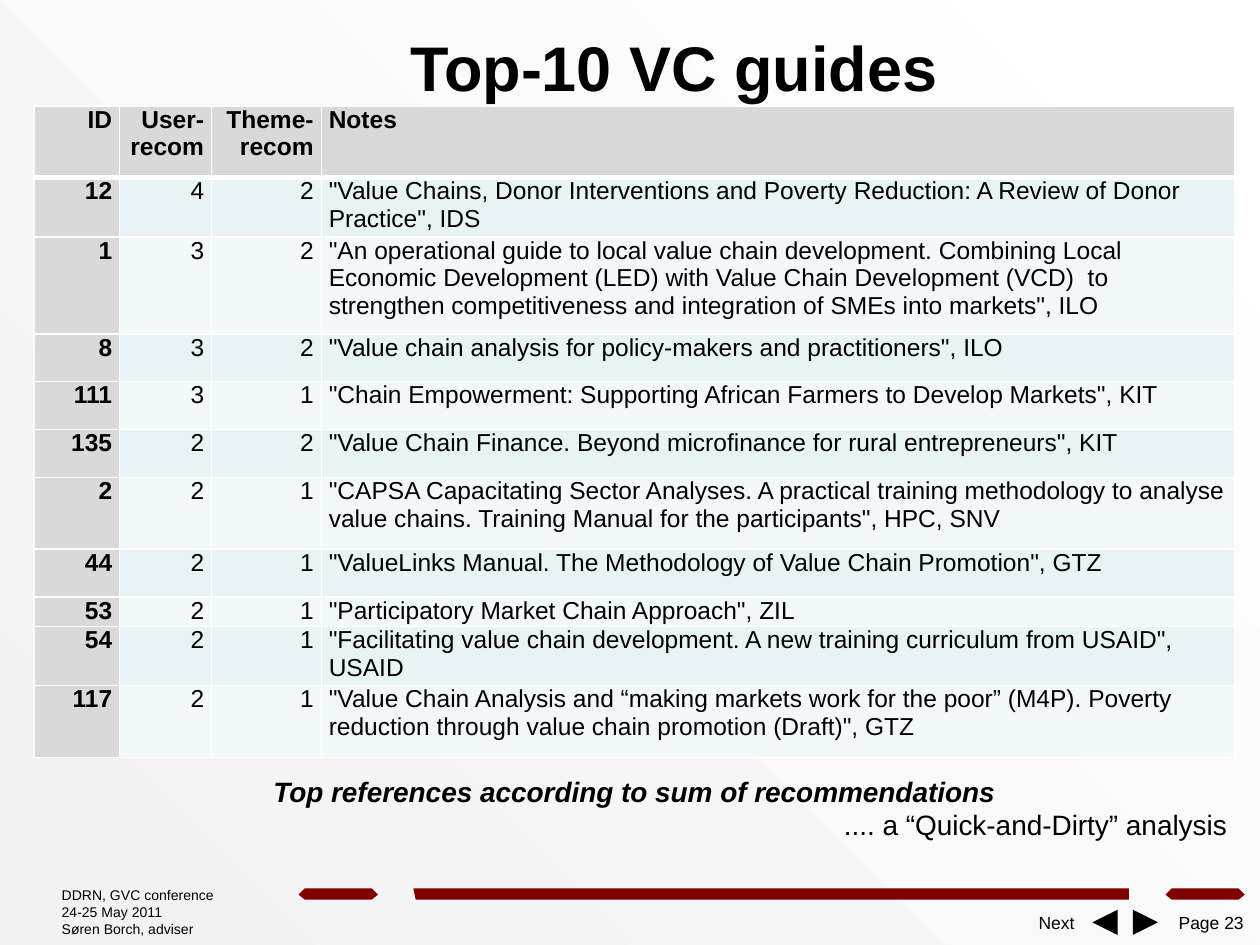
"""Build the "Top-10 VC guides" slide."""
from dataclasses import dataclass

from lxml import etree
from pptx import Presentation
from pptx import util as u
from pptx.dml.color import RGBColor
from pptx.enum import shapes, text
from pptx.oxml import ns

BLACK = RGBColor(0x00, 0x00, 0x00)
WHITE = RGBColor(0xFF, 0xFF, 0xFF)
PALE_GREY = RGBColor(0xF2, 0xF2, 0xF2)
HEADER_GREY = RGBColor(0xD9, 0xD9, 0xD9)
BANDS = (RGBColor(0xE7, 0xF3, 0xF4), RGBColor(0xF3, 0xF9, 0xFA))
DARK_RED = RGBColor(0x80, 0x00, 0x00)

LEFT, CENTER, RIGHT = text.PP_ALIGN.LEFT, text.PP_ALIGN.CENTER, text.PP_ALIGN.RIGHT
TOP, MIDDLE = text.MSO_ANCHOR.TOP, text.MSO_ANCHOR.MIDDLE
COLUMN_WIDTHS = (0.68, 0.73, 0.87, 7.25)
HEADERS = ("ID", "User-recom", "Theme-recom", "Notes")
HEADER_HEIGHT = 0.57


@dataclass(frozen=True)
class Guide:
    number: int
    user: int
    theme: int
    notes: str
    height: float


@dataclass(frozen=True)
class Line:
    words: str
    size: float
    align: text.PP_ALIGN = LEFT
    bold: bool = False
    italic: bool = False


@dataclass(frozen=True)
class Label:
    box: tuple[float, float, float, float]
    lines: tuple[Line, ...]
    anchor: text.MSO_ANCHOR = TOP
    inset_x: float = 0.06
    inset_y: float = 0.05
    wrap: bool = True


GUIDES = (
    Guide(12, 4, 2, '"Value Chains, Donor Interventions and Poverty Reduction: '
          'A Review of Donor Practice", IDS', 0.47),
    Guide(1, 3, 2, '"An operational guide to local value chain development. Combining Local '
          'Economic Development (LED) with Value Chain Development (VCD)  to strengthen '
          'competitiveness and integration of SMEs into markets", ILO', 0.77),
    Guide(8, 3, 2, '"Value chain analysis for policy-makers and practitioners", ILO', 0.38),
    Guide(111, 3, 1, '"Chain Empowerment: Supporting African Farmers to Develop Markets", KIT',
          0.38),
    Guide(135, 2, 2, '"Value Chain Finance. Beyond microfinance for rural entrepreneurs", KIT',
          0.38),
    Guide(2, 2, 1, '"CAPSA Capacitating Sector Analyses. A practical training methodology to '
          'analyse value chains. Training Manual for the participants", HPC, SNV', 0.57),
    Guide(44, 2, 1, '"ValueLinks Manual. The Methodology of Value Chain Promotion", GTZ', 0.38),
    Guide(53, 2, 1, '"Participatory Market Chain Approach", ZIL', 0.23),
    Guide(54, 2, 1, '"Facilitating value chain development. A new training curriculum from '
          'USAID", USAID', 0.47),
    Guide(117, 2, 1, '"Value Chain Analysis and “making markets work for the poor” (M4P). '
          'Poverty reduction through value chain promotion (Draft)", GTZ', 0.57),
)

PAGE = Label((9.06, 7.19, 0.87, 0.27), (Line("Page 23", 10, RIGHT),))
NEXT = Label((8.07, 7.2, 0.63, 0.24), (Line("Next", 10, CENTER),), MIDDLE, wrap=False)
FOOTER = Label((0.43, 7.04, 1.37, 0.4),
               (Line("DDRN, GVC conference", 8), Line("24-25 May 2011", 8),
                Line("Søren Borch, adviser", 8)), inset_y=0, wrap=False)
TITLE = Label((0.9, 0.13, 8.9, 0.79), (Line("Top-10 VC guides", 36, CENTER, True),),
              MIDDLE, inset_x=0.1)
CAPTION = Label((0.27, 6.09, 9.53, 0.64),
                (Line("Top references according to sum of recommendations", 16, CENTER, True, True),
                 Line(".... a “Quick-and-Dirty” analysis", 16, RIGHT)), MIDDLE)


def write_line(paragraph, line: Line) -> None:
    paragraph.text = line.words
    paragraph.alignment = line.align
    font = paragraph.font
    font.name, font.size = "Arial", u.Pt(line.size)
    font.bold, font.italic = line.bold, line.italic
    font.color.rgb = BLACK


def fill_label(shape, label: Label) -> None:
    frame = shape.text_frame
    frame.word_wrap = label.wrap
    frame.vertical_anchor = label.anchor
    frame.margin_left = frame.margin_right = u.Inches(label.inset_x)
    frame.margin_top = frame.margin_bottom = u.Inches(label.inset_y)
    for index, line in enumerate(label.lines):
        write_line(frame.add_paragraph() if index else frame.paragraphs[0], line)


def add_label(slide, label: Label) -> None:
    fill_label(slide.shapes.add_textbox(*map(u.Inches, label.box)), label)


def paint(shape, color: RGBColor) -> None:
    shape.fill.solid()
    shape.fill.fore_color.rgb = color
    shape.line.fill.background()
    shape.shadow.inherit = False


def add_outline(slide, points: list[tuple[float, float]]) -> None:
    start, *others = [(u.Inches(x), u.Inches(y)) for x, y in points]
    builder = slide.shapes.build_freeform(*start)
    builder.add_line_segments(others, close=True)
    paint(builder.convert_to_shape(), DARK_RED)


def add_red_bars(slide) -> None:
    top, middle, bottom = 7.05, 7.1, 7.14
    for left, right in ((2.37, 3), (9.25, 9.88)):
        add_outline(slide, [(left, middle), (left + 0.05, top), (right - 0.05, top),
                            (right, middle), (right - 0.05, bottom), (left + 0.05, bottom)])
    add_outline(slide, [(3.3, bottom), (3.28, top), (8.96, top), (8.96, bottom)])


def add_navigation(slide) -> None:
    for left, rotation in ((8.67, 270), (8.99, 90)):
        arrow = slide.shapes.add_shape(shapes.MSO_SHAPE.ISOSCELES_TRIANGLE,
                                       *map(u.Inches, (left, 7.22, 0.2, 0.2)))
        arrow.rotation = rotation
        paint(arrow, BLACK)
    button = slide.shapes.add_shape(shapes.MSO_SHAPE.BEVEL, *map(u.Inches, NEXT.box))
    button.fill.background()
    button.line.fill.background()
    button.shadow.inherit = False
    fill_label(button, NEXT)


def add_borders(cell, top: float, bottom: float) -> None:
    properties = cell._tc.get_or_add_tcPr()
    for tag, width in (("a:lnL", 1), ("a:lnR", 1), ("a:lnT", top), ("a:lnB", bottom)):
        border = etree.SubElement(properties, ns.qn(tag), w=str(u.Pt(width)))
        solid = etree.SubElement(border, ns.qn("a:solidFill"))
        etree.SubElement(solid, ns.qn("a:srgbClr"), val=str(WHITE))


def add_guide_table(slide) -> None:
    heights = [HEADER_HEIGHT] + [guide.height for guide in GUIDES]
    rows = [HEADERS] + [(guide.number, guide.user, guide.theme, guide.notes) for guide in GUIDES]
    box = (0.27, 0.84, sum(COLUMN_WIDTHS), sum(heights))
    table = slide.shapes.add_table(len(rows), len(HEADERS), *map(u.Inches, box)).table
    table.first_row = table.horz_banding = False
    for column, width in zip(table.columns, COLUMN_WIDTHS):
        column.width = u.Inches(width)
    for r, (values, height) in enumerate(zip(rows, heights)):
        table.rows[r].height = u.Inches(height)
        for c, value in enumerate(values):
            cell = table.cell(r, c)
            heading = r == 0 or c == 0
            cell.margin_left = cell.margin_right = u.Inches(0.06)
            cell.margin_top = cell.margin_bottom = 0
            add_borders(cell, 3 if r == 1 else 1, 3 if r == 0 else 1)
            cell.fill.solid()
            cell.fill.fore_color.rgb = HEADER_GREY if heading else BANDS[(r - 1) % 2]
            align = LEFT if c == len(HEADERS) - 1 else RIGHT
            write_line(cell.text_frame.paragraphs[0], Line(str(value), 14, align, heading))


def main() -> None:
    presentation = Presentation()
    presentation.slide_width, presentation.slide_height = u.Inches(10), u.Inches(7.5)
    slide = presentation.slides.add_slide(presentation.slide_layouts[6])
    background = slide.background.fill
    background.gradient()
    background.gradient_angle = 45
    for stop, color in zip(background.gradient_stops, (PALE_GREY, WHITE)):
        stop.color.rgb = color
    add_label(slide, PAGE)
    add_red_bars(slide)
    add_navigation(slide)
    for label in (FOOTER, TITLE):
        add_label(slide, label)
    add_guide_table(slide)
    add_label(slide, CAPTION)
    presentation.save("out.pptx")


if __name__ == "__main__":
    main()
